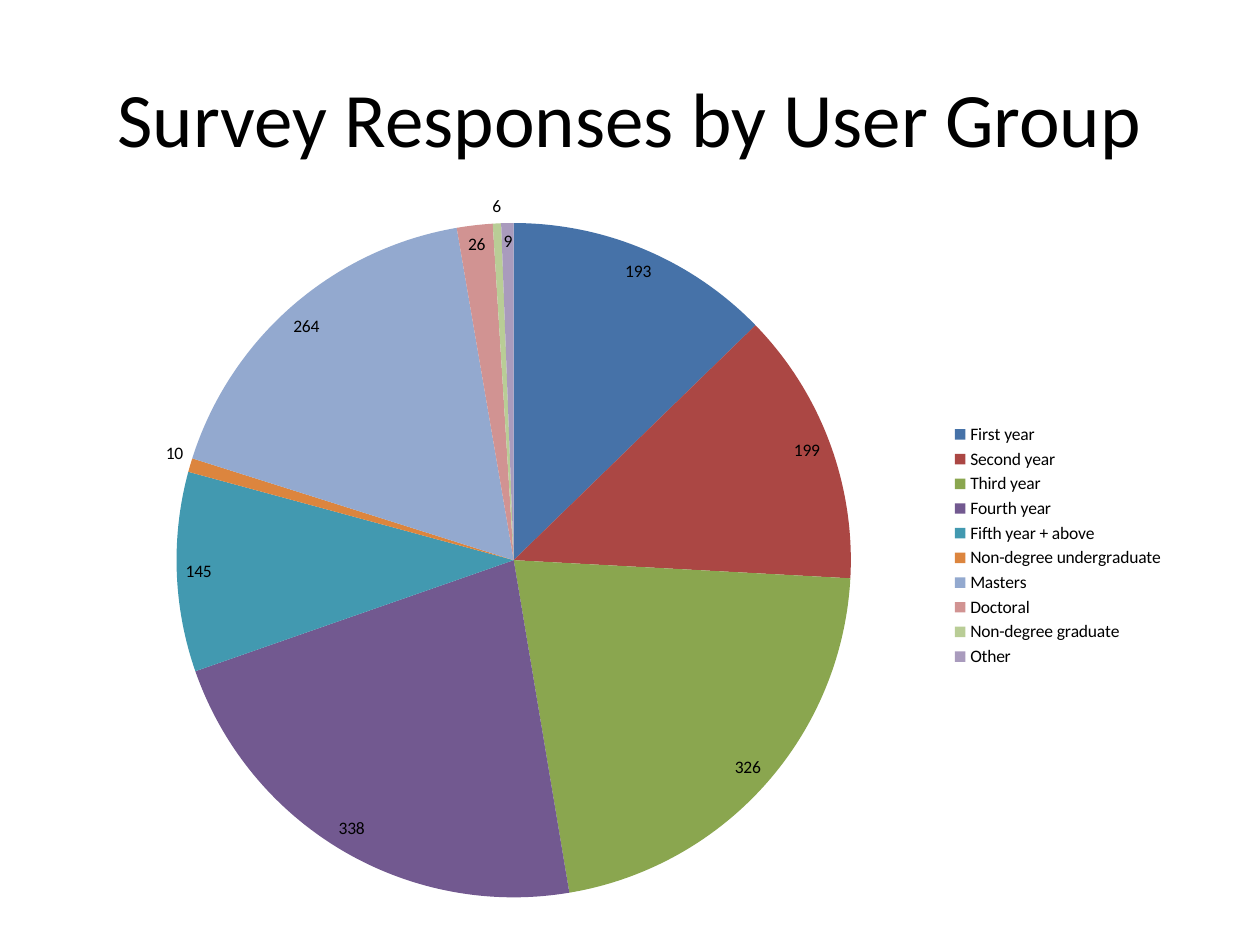
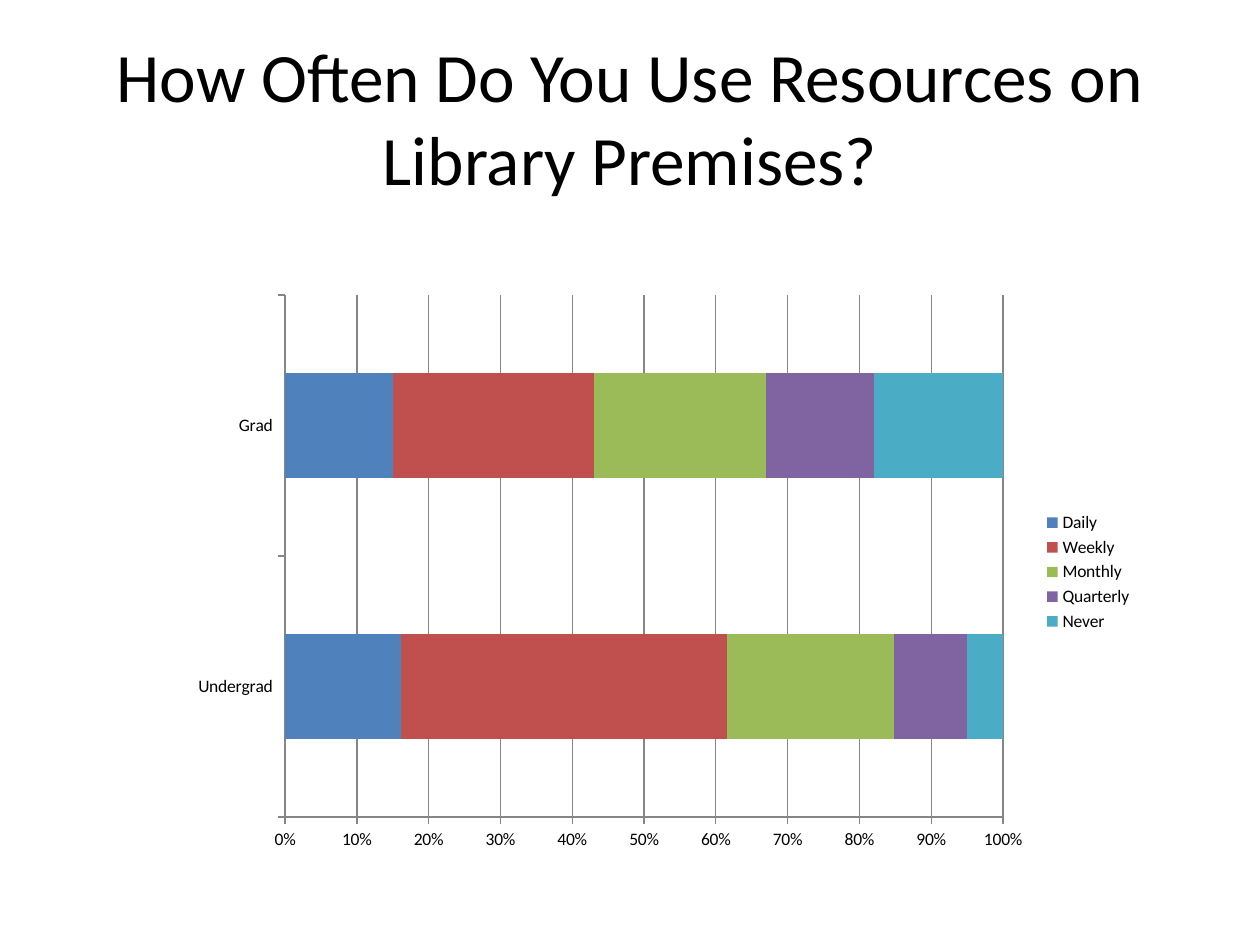
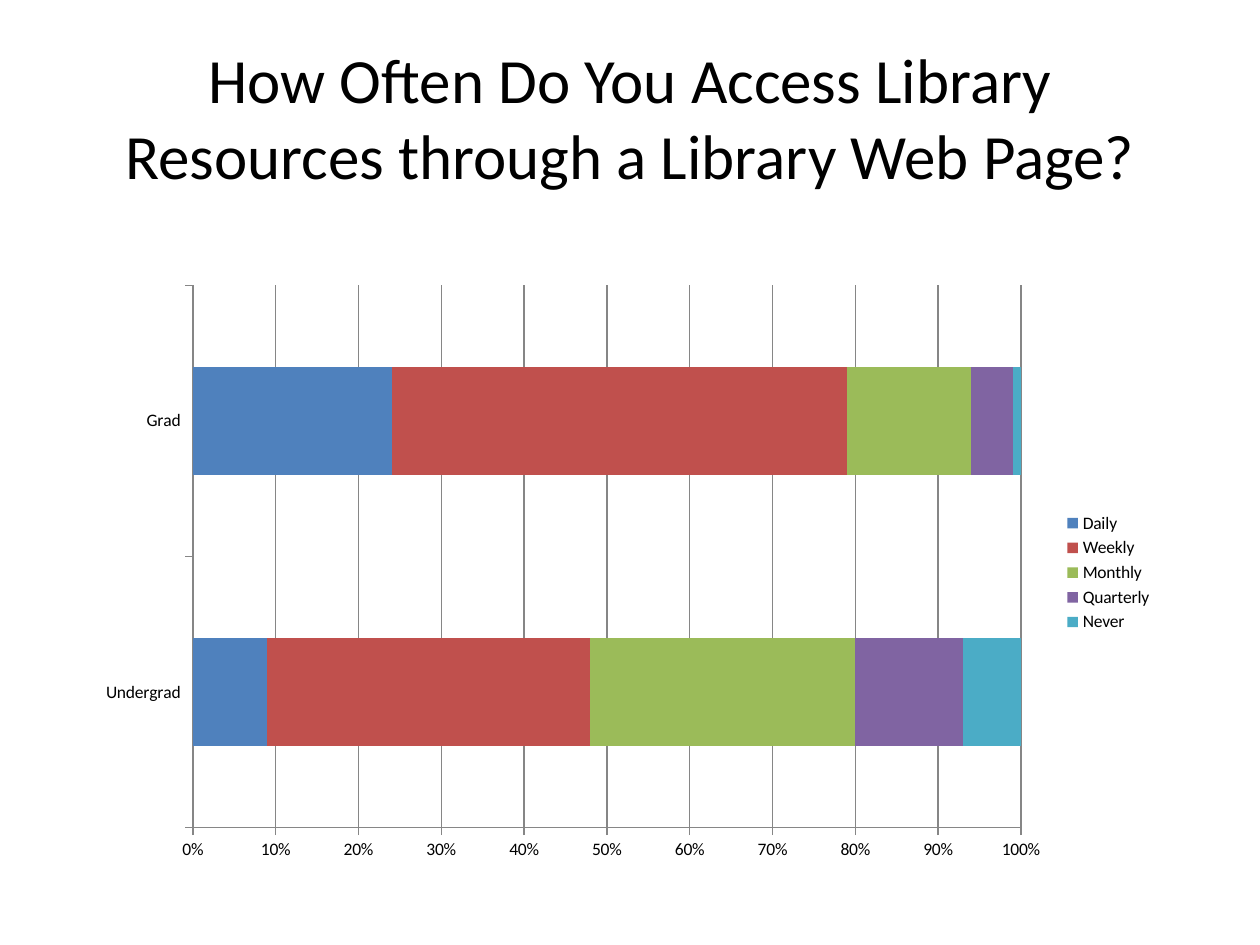
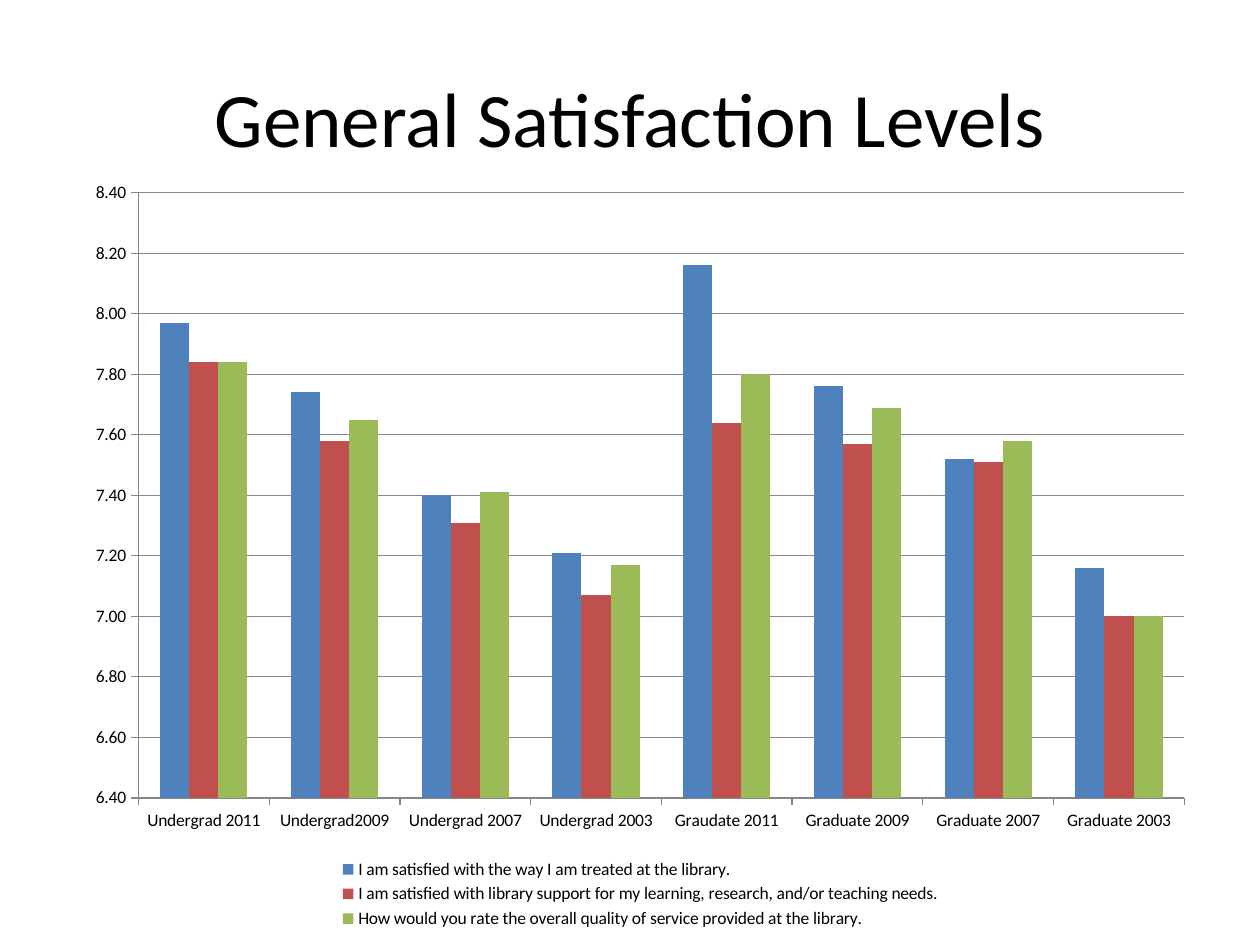
"""Build four slides of library survey charts."""
from lxml import etree
from pptx import Presentation
from pptx.chart.data import CategoryChartData as Data
from pptx.dml.color import RGBColor as Rgb
from pptx.enum.chart import XL_CHART_TYPE as Kind
from pptx.enum.chart import XL_LABEL_POSITION as Spot
from pptx.enum.chart import XL_LEGEND_POSITION as Side
from pptx.enum.chart import XL_TICK_MARK as Tick
from pptx.enum.text import MSO_ANCHOR as Anchor
from pptx.enum.text import PP_ALIGN as Align
from pptx.oxml.ns import qn
from pptx.util import Inches, Pt

FONT = "Calibri"
HUES = {
    "text": "000000", "grid": "868686", "page": "FFFFFF",
    "blue": "4F81BD", "red": "C0504D", "green": "9BBB59",
    "plum": "8064A2", "teal": "4BACC6",
    "deep blue": "4672A8", "deep red": "AB4744", "deep green": "8AA64F",
    "deep plum": "725990", "deep teal": "4299B0", "orange": "DC853E",
    "pale blue": "93A9CF", "pale red": "D19392", "pale green": "B9CD96",
    "pale plum": "A99BBD",
}
BARS = ["blue", "red", "green", "plum", "teal"]
SLICES = ["deep blue", "deep red", "deep green", "deep plum", "deep teal",
          "orange", "pale blue", "pale red", "pale green", "pale plum"]
GROUPS = {
    "First year": 193, "Second year": 199, "Third year": 326,
    "Fourth year": 338, "Fifth year + above": 145,
    "Non-degree undergraduate": 10, "Masters": 264, "Doctoral": 26,
    "Non-degree graduate": 6, "Other": 9,
}
LEVELS = ["Undergrad", "Grad"]
VISITS = {"Daily": (16, 15), "Weekly": (45, 28), "Monthly": (23, 24),
          "Quarterly": (10, 15), "Never": (5, 18)}
CLICKS = {"Daily": (9, 24), "Weekly": (39, 55), "Monthly": (32, 15),
          "Quarterly": (13, 5), "Never": (7, 1)}
YEARS = ["Undergrad 2011", "Undergrad2009", "Undergrad 2007",
         "Undergrad 2003", "Graudate 2011", "Graduate 2009",
         "Graduate 2007", "Graduate 2003"]
SCORES = {
    "I am satisfied with the way I am treated at the library.":
        (7.97, 7.74, 7.4, 7.21, 8.16, 7.76, 7.52, 7.16),
    "I am satisfied with library support for my learning, research, "
    "and/or teaching needs.":
        (7.84, 7.58, 7.31, 7.07, 7.64, 7.57, 7.51, 7),
    "How would you rate the overall quality of service provided "
    "at the library.":
        (7.84, 7.65, 7.41, 7.17, 7.8, 7.69, 7.58, 7),
}


def assign(item, **values):
    for key, value in values.items():
        setattr(item, key, value)


def paint(fill, hue):
    fill.solid()
    fill.fore_color.rgb = Rgb.from_string(HUES[hue])


class Deck:
    def __init__(self):
        self.show = Presentation()
        assign(self.show, slide_width=Inches(10), slide_height=Inches(7.5))
        self.slide = None

    def page(self, title, size):
        self.slide = self.show.slides.add_slide(self.show.slide_layouts[6])
        paint(self.slide.background.fill, "page")
        box = self.slide.shapes.add_textbox(
            Inches(0.5), Inches(0.3), Inches(9), Inches(1.25))
        assign(box.text_frame, word_wrap=True, vertical_anchor=Anchor.MIDDLE)
        line = box.text_frame.paragraphs[0]
        line.alignment = Align.CENTER
        run = line.add_run()
        run.text = title
        self.style(run.font, size)

    def style(self, font, size):
        assign(font, name=FONT, size=Pt(size))
        font.color.rgb = Rgb.from_string(HUES["text"])

    def chart(self, kind, place, names, rows, side=Side.RIGHT):
        data = Data()
        data.categories = names
        for name, values in rows.items():
            data.add_series(name, values)
        spots = [Inches(value) for value in place]
        chart = self.slide.shapes.add_chart(kind, *spots, data).chart
        assign(chart, has_title=False, has_legend=True)
        assign(chart.legend, position=side, include_in_layout=False)
        self.style(chart.font, 10)
        return chart

    def pie(self, place, parts, hues, frame):
        chart = self.chart(Kind.PIE, place, list(parts),
                           {"Series 1": list(parts.values())})
        chart.has_title = False
        plot = chart.plots[0]
        assign(plot, vary_by_categories=True, has_data_labels=True)
        assign(plot.data_labels, show_value=True, show_percentage=False,
               position=Spot.BEST_FIT)
        points = plot.series[0].points
        for index, hue in enumerate(hues):
            paint(points[index].format.fill, hue)
        self.frame(chart, frame)

    def frame(self, chart, sizes):
        area = chart.plots[0]._element.getparent()
        for old in area.findall(qn("c:layout")):
            area.remove(old)
        layout = etree.Element(qn("c:layout"))
        manual = etree.SubElement(layout, qn("c:manualLayout"))
        marks = {"layoutTarget": "inner", "xMode": "edge", "yMode": "edge"}
        marks.update(zip("xywh", sizes))
        for tag, value in marks.items():
            etree.SubElement(manual, qn("c:" + tag)).set("val", str(value))
        area.insert(0, layout)

    def bars(self, kind, place, names, rows, mask, overlap=0,
             side=Side.RIGHT, **scale):
        chart = self.chart(kind, place, names, rows, side)
        plot = chart.plots[0]
        assign(plot, gap_width=150, overlap=overlap, vary_by_categories=False)
        for part, hue in zip(plot.series, BARS):
            paint(part.format.fill, hue)
        base, value = chart.category_axis, chart.value_axis
        for axis in (base, value):
            assign(axis, major_tick_mark=Tick.OUTSIDE,
                   minor_tick_mark=Tick.NONE)
        base.has_major_gridlines = False
        assign(value, has_major_gridlines=True, **scale)
        assign(value.tick_labels, number_format=mask,
               number_format_is_linked=False)
        for item in (base, value, value.major_gridlines):
            paint(item.format.line.fill, "grid")
            item.format.line.width = Pt(0.75)


def main():
    deck = Deck()
    deck.page("Survey Responses by User Group", 44)
    deck.pie((0.42, 1.41, 8.92, 5.84), GROUPS, SLICES,
             (0.11, 0.06, 0.6, 0.92))
    deck.page("How Often Do You Use Resources on Library Premises?", 39.6)
    deck.bars(Kind.BAR_STACKED_100, (1.42, 2.25, 7.67, 4.58),
              LEVELS, VISITS, "0%", 100)
    deck.page("How Often Do You Access Library Resources "
              "through a Library Web Page?", 36)
    deck.bars(Kind.BAR_STACKED_100, (0.67, 2.17, 8.58, 4.75),
              LEVELS, CLICKS, "0%", 100)
    deck.page("General Satisfaction Levels", 44)
    deck.bars(Kind.COLUMN_CLUSTERED, (0.58, 1.33, 9, 6.08),
              YEARS, SCORES, "0.00", side=Side.BOTTOM,
              minimum_scale=6.4, maximum_scale=8.4, major_unit=0.2)
    deck.show.save("out.pptx")


if __name__ == "__main__":
    main()
